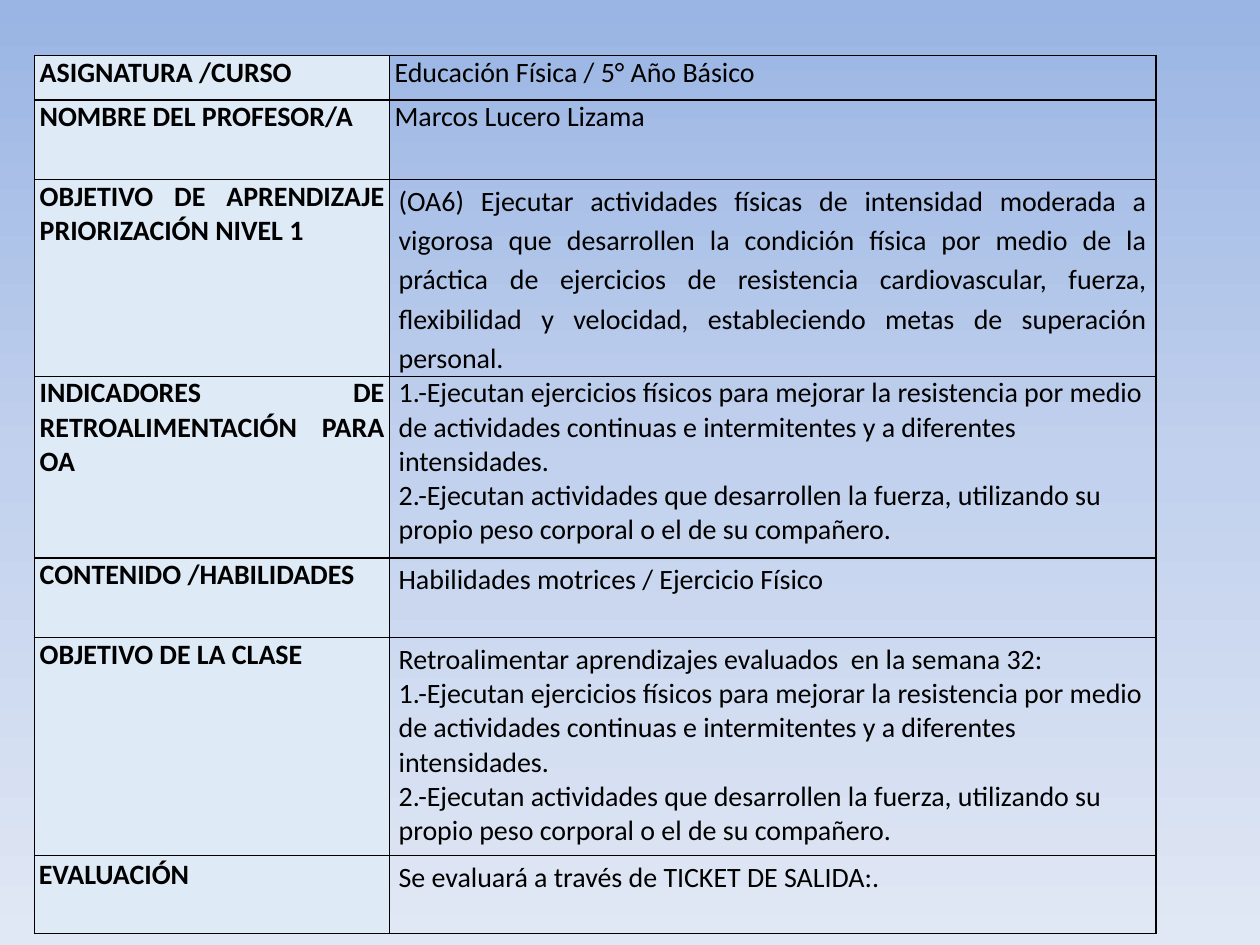
from copy import deepcopy
from lxml.etree import fromstring
from pptx import Presentation
from pptx.dml.color import RGBColor
from pptx.enum.text import PP_ALIGN as Align
from pptx.util import Pt

BLACK = RGBColor(0, 0, 0)
PALE = RGBColor(0xDE, 0xEA, 0xF6)
SKY = [
    (0, RGBColor(0x9A, 0xB5, 0xE4)),
    (0.5, RGBColor(0xC2, 0xD1, 0xED)),
    (1, RGBColor(0xE1, 0xE8, 0xF5)),
]
FONT, SIZE = "Calibri", 16

# Content: a paragraph is (text, alignment, line spacing)
FULL, LEFT = Align.JUSTIFY, Align.LEFT
GOALS = [
    ("1.-Ejecutan ejercicios físicos para mejorar la resistencia por medio de "
     "actividades continuas e intermitentes y a diferentes intensidades.", LEFT, 1),
    ("2.-Ejecutan actividades que desarrollen la fuerza, utilizando su propio "
     "peso corporal o el de su compañero.", LEFT, 1),
]
# Margins of a cell: side, top and bottom
SLIM, WIDE, LAST = (2.9, 0), (5.2, 0), (2.4, 1.4)
# Row: height, label, label margins, paragraphs, body margins
ROWS = [
    (25.2, "ASIGNATURA /CURSO", SLIM,
     [("Educación Física / 5° Año Básico", FULL, 1)], SLIM),
    (45.6, "NOMBRE DEL PROFESOR/A", SLIM,
     [("Marcos Lucero Lizama", FULL, 1)], SLIM),
    (112, "OBJETIVO DE APRENDIZAJE PRIORIZACIÓN NIVEL 1", SLIM,
     [("(OA6) Ejecutar actividades físicas de intensidad moderada a vigorosa que "
       "desarrollen la condición física por medio de la práctica de ejercicios de "
       "resistencia cardiovascular, fuerza, flexibilidad y velocidad, "
       "estableciendo metas de superación personal.", FULL, 1.15)], WIDE),
    (103.8, "INDICADORES DE RETROALIMENTACIÓN PARA OA", SLIM, GOALS, WIDE),
    (45.6, "CONTENIDO /HABILIDADES", SLIM,
     [("Habilidades motrices / Ejercicio Físico", FULL, 1.15)], WIDE),
    (124.6, "OBJETIVO DE LA CLASE", SLIM,
     [("Retroalimentar aprendizajes evaluados  en la semana 32:", FULL, 1.15)]
     + GOALS, WIDE),
    (44.6, "EVALUACIÓN", LAST,
     [("Se evaluará a través de TICKET DE SALIDA:.", FULL, 1.15)], WIDE),
]
COLS = [202.8, 438]
X, Y = 19.8, 31.8
NS = "http://schemas.openxmlformats.org/drawingml/2006/main"


def paint(slide):
    """Fill the background with the three-stop gradient."""
    fill = slide.background.fill
    fill.gradient()
    fill.gradient_angle = 270
    stops = slide.element.xpath(".//a:gsLst")[0]
    stops.insert(1, deepcopy(stops[0]))
    for stop, (pos, color) in zip(fill.gradient_stops, SKY):
        stop.position = pos
        stop.color.rgb = color


def border(cell):
    props = cell._tc.get_or_add_tcPr()
    for i, side in enumerate(("lnL", "lnR", "lnT", "lnB")):
        props.insert(i, fromstring(
            f'<a:{side} xmlns:a="{NS}" w="{Pt(1)}"><a:solidFill>'
            f'<a:srgbClr val="{BLACK}"/></a:solidFill></a:{side}>'))


def write(cell, paras, margin, bold):
    cell.margin_left = cell.margin_right = Pt(margin[0])
    cell.margin_top = cell.margin_bottom = Pt(margin[1])
    frame = cell.text_frame
    frame.text = "\n".join(text for text, _, _ in paras)
    for para, (_, align, space) in zip(frame.paragraphs, paras):
        para.alignment = align
        para.line_spacing = float(space)
        font = para.runs[0].font
        font.name, font.size, font.bold = FONT, Pt(SIZE), bold
        font.color.rgb = BLACK
    border(cell)


def main():
    deck = Presentation()
    deck.slide_width, deck.slide_height = Pt(720), Pt(540)
    slide = deck.slides.add_slide(deck.slide_layouts[6])
    paint(slide)

    # Table frame
    tall = sum(row[0] for row in ROWS)
    table = slide.shapes.add_table(
        len(ROWS), len(COLS), Pt(X), Pt(Y), Pt(sum(COLS)), Pt(tall)).table
    table.first_row = table.horz_banding = False
    for col, width in zip(table.columns, COLS):
        col.width = Pt(width)

    # Label and body of each row
    for i, (height, label, slim, paras, wide) in enumerate(ROWS):
        table.rows[i].height = Pt(height)
        head, body = table.cell(i, 0), table.cell(i, 1)
        write(head, [(label, FULL, 1)], slim, True)
        write(body, paras, wide, False)
        head.fill.solid()
        head.fill.fore_color.rgb = PALE
        body.fill.background()

    deck.save("out.pptx")


if __name__ == "__main__":
    main()
